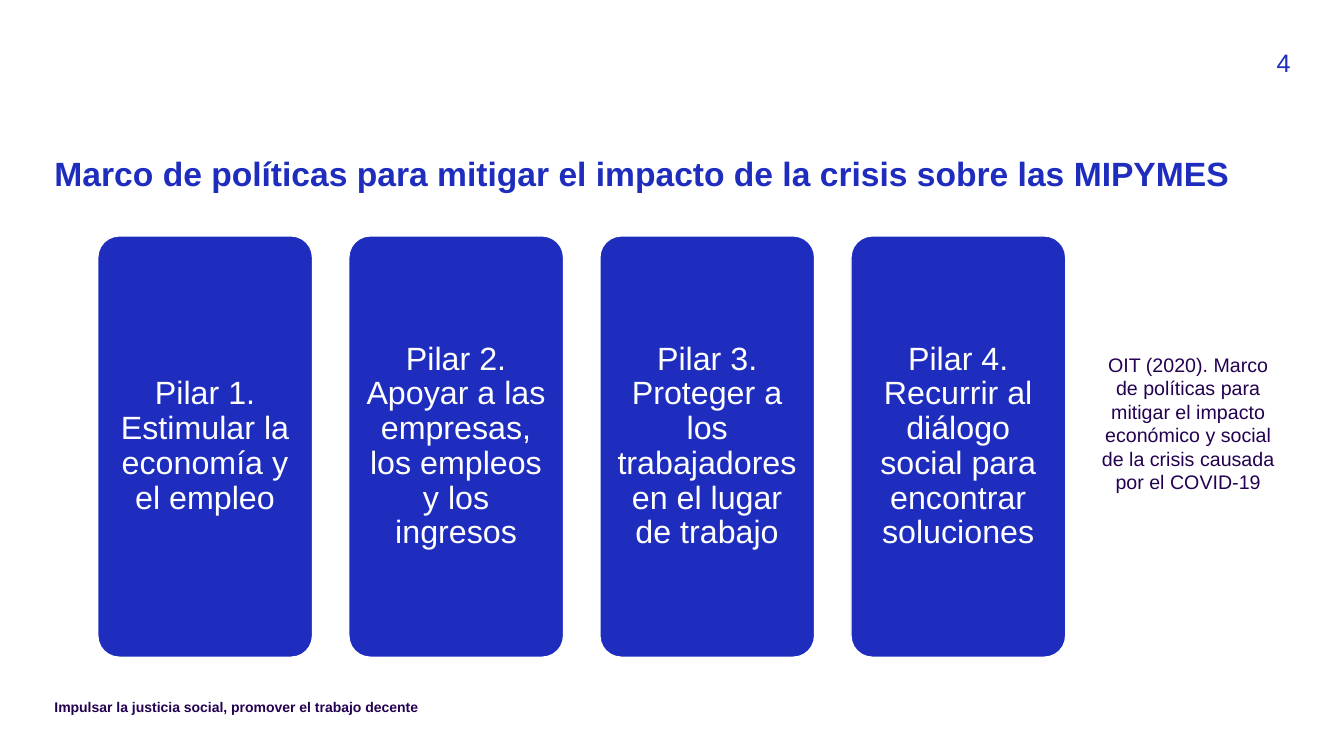
"""Build the slide on the four policy pillars for small businesses."""

from dataclasses import dataclass

from pptx import Presentation
from pptx.dml.color import RGBColor
from pptx.enum.shapes import MSO_SHAPE
from pptx.enum.text import MSO_ANCHOR, MSO_AUTO_SIZE, PP_ALIGN
from pptx.shapes.autoshape import Shape
from pptx.slide import Slide
from pptx.util import Emu, Pt

EMU_PER_PX = 9144
FONT = "Arial"
BLUE = RGBColor(0x1E, 0x2D, 0xBE)
PURPLE = RGBColor(0x23, 0x00, 0x50)
WHITE = RGBColor(0xFF, 0xFF, 0xFF)


@dataclass(frozen=True)
class Box:
    left: int
    top: int
    width: int
    height: int


@dataclass(frozen=True)
class TextStyle:
    size: int
    color: RGBColor
    bold: bool = False
    align: PP_ALIGN = PP_ALIGN.LEFT
    anchor: MSO_ANCHOR = MSO_ANCHOR.TOP
    line_spacing: float = 1.0
    inset_x: int = 0
    inset_y: int = 0


@dataclass(frozen=True)
class Label:
    text: str
    box: Box
    style: TextStyle


TITLE = Label(
    "Marco de políticas para mitigar el impacto de la crisis sobre las MIPYMES",
    Box(54, 156, 1226, 79),
    TextStyle(24, BLUE, bold=True, line_spacing=0.9),
)
LABELS = (
    Label(
        "Impulsar la justicia social, promover el trabajo decente",
        Box(54, 693, 613, 20),
        TextStyle(10, PURPLE, bold=True),
    ),
    Label("4", Box(1221, 47, 59, 31), TextStyle(18, BLUE, align=PP_ALIGN.RIGHT)),
    Label(
        "OIT (2020). Marco de políticas para mitigar el impacto económico y social "
        "de la crisis causada por el COVID-19",
        Box(1077, 345, 203, 151),
        TextStyle(14, PURPLE, align=PP_ALIGN.CENTER, inset_x=10, inset_y=5),
    ),
)
PILLARS = (
    "Pilar 1. Estimular la economía y el empleo",
    "Pilar 2. Apoyar a las empresas, los empleos y los ingresos",
    "Pilar 3. Proteger a los trabajadores en el lugar de trabajo",
    "Pilar 4. Recurrir al diálogo social para encontrar soluciones",
)
FIRST_PILLAR = Box(97, 234, 213, 418)
PILLAR_STEP = 249
PILLAR_STYLE = TextStyle(
    23, WHITE, align=PP_ALIGN.CENTER, anchor=MSO_ANCHOR.MIDDLE,
    line_spacing=0.9, inset_x=10, inset_y=10,
)


def px(length: int) -> Emu:
    return Emu(length * EMU_PER_PX)


def place(shape: Shape, box: Box) -> None:
    shape.left, shape.top = px(box.left), px(box.top)
    shape.width, shape.height = px(box.width), px(box.height)


def write(shape: Shape, text: str, style: TextStyle) -> None:
    frame = shape.text_frame
    frame.word_wrap = True
    frame.auto_size = MSO_AUTO_SIZE.NONE
    frame.vertical_anchor = style.anchor
    frame.margin_left = frame.margin_right = px(style.inset_x)
    frame.margin_top = frame.margin_bottom = px(style.inset_y)
    paragraph = frame.paragraphs[0]
    paragraph.alignment = style.align
    paragraph.line_spacing = style.line_spacing
    run = paragraph.add_run()
    run.text = text
    run.font.name = FONT
    run.font.size = Pt(style.size)
    run.font.bold = style.bold
    run.font.color.rgb = style.color


def add_title(slide: Slide, title: Label) -> None:
    place(slide.shapes.title, title.box)
    write(slide.shapes.title, title.text, title.style)


def add_label(slide: Slide, label: Label) -> None:
    shape = slide.shapes.add_textbox(0, 0, 0, 0)
    place(shape, label.box)
    write(shape, label.text, label.style)


def add_pillar(slide: Slide, index: int, text: str) -> None:
    shape = slide.shapes.add_shape(MSO_SHAPE.ROUNDED_RECTANGLE, 0, 0, 0, 0)
    first = FIRST_PILLAR
    left = first.left + index * PILLAR_STEP
    place(shape, Box(left, first.top, first.width, first.height))
    shape.adjustments[0] = 0.1
    shape.shadow.inherit = False
    shape.fill.solid()
    shape.fill.fore_color.rgb = BLUE
    shape.line.color.rgb = WHITE
    shape.line.width = Pt(1)
    write(shape, text, PILLAR_STYLE)


def main() -> None:
    presentation = Presentation()
    presentation.slide_width, presentation.slide_height = px(1333), px(750)
    title_only = presentation.slide_layouts.get_by_name("Title Only")
    slide = presentation.slides.add_slide(title_only)
    add_title(slide, TITLE)
    for label in LABELS:
        add_label(slide, label)
    for index, text in enumerate(PILLARS):
        add_pillar(slide, index, text)
    presentation.save("out.pptx")


if __name__ == "__main__":
    main()
